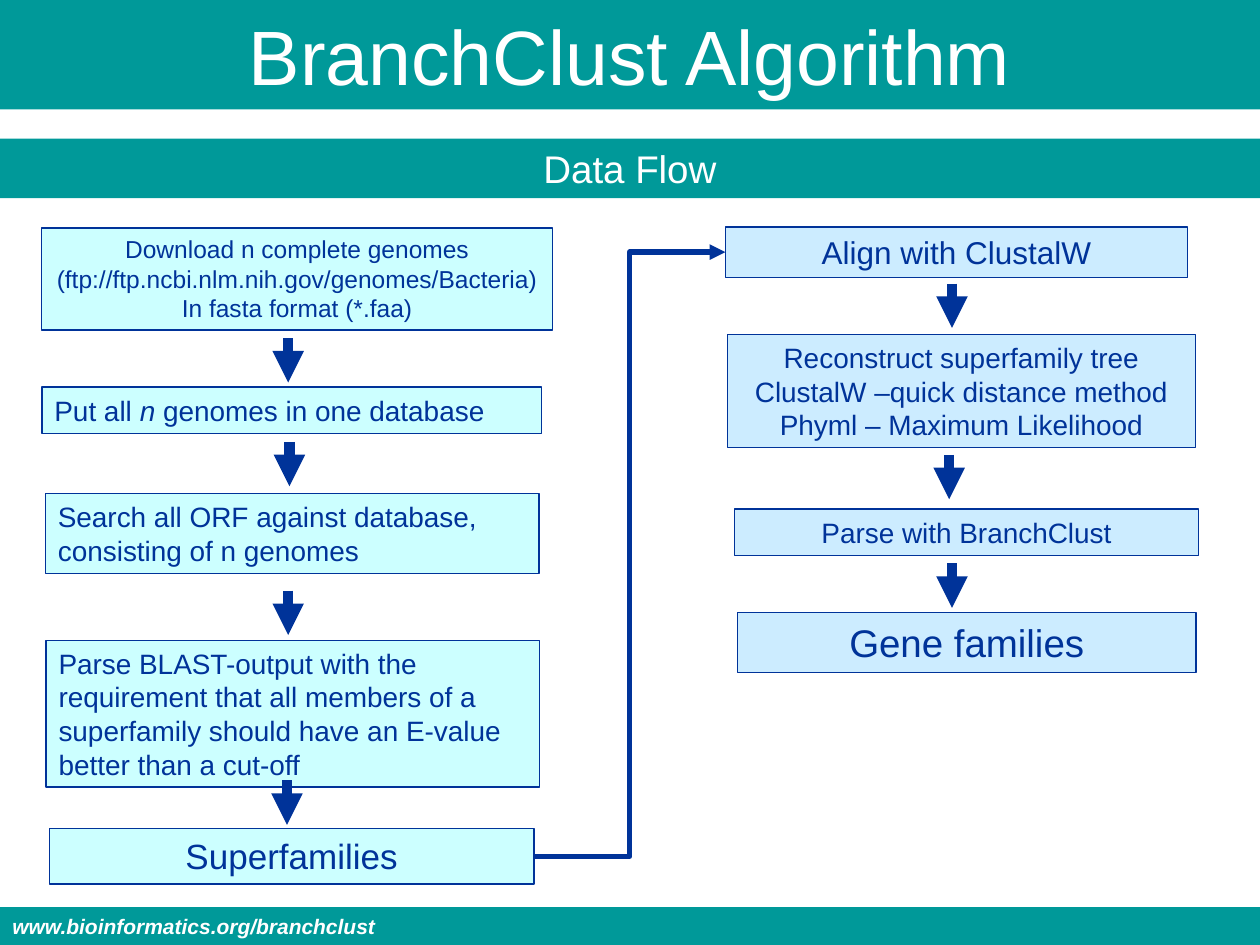
from lxml.etree import SubElement
from pptx import Presentation
from pptx.dml.color import RGBColor
from pptx.enum.shapes import MSO_CONNECTOR as Connector, MSO_SHAPE as Shape
from pptx.enum.text import MSO_ANCHOR as Anchor, MSO_AUTO_SIZE as AutoSize, PP_ALIGN as Align
from pptx.oxml.ns import qn
from pptx.util import Pt

COLORS = {
    "banner": "009999",
    "banner_text": "FFFFFF",
    "ink": "003399",
    "search": "CCFFFF",
    "tree": "CCECFF",
}
FRAME = {
    "word_wrap": True,
    "auto_size": AutoSize.NONE,
    "margin_left": Pt(7.2),
    "margin_right": Pt(7.2),
    "margin_top": Pt(3.6),
    "margin_bottom": Pt(3.6),
}
SEARCH_STEPS = [
    ((23.8, 130.3, 292, 58.3), 14, Align.CENTER,
     ["Download n complete genomes (ftp://ftp.ncbi.nlm.nih.gov/genomes/Bacteria)",
      "In fasta format (*.faa)"]),
    ((24, 221.2, 285.6, 26.6), 16, Align.LEFT, ["Put all *n* genomes in one database"]),
    ((26, 282.2, 282, 45.4), 16, Align.LEFT,
     ["Search all ORF against database, consisting of n genomes"]),
    ((26.4, 365.8, 282, 84), 16, Align.LEFT,
     ["Parse BLAST-output with the requirement that all members of a "
      "superfamily should have an E-value better than a cut-off"]),
    ((28.2, 473.5, 277, 31.7), 20, Align.CENTER, ["Superfamilies"]),
]
TREE_STEPS = [
    ((414.5, 129.7, 264.2, 28.8), 18, Align.CENTER, ["Align with ClustalW"]),
    ((415.6, 191, 267.6, 64.6), 16, Align.CENTER,
     ["Reconstruct superfamily tree", "ClustalW –quick distance method",
      "Phyml – Maximum Likelihood"]),
    ((419.8, 290.9, 265, 26.6), 16, Align.CENTER, ["Parse with BranchClust"]),
    ((421.4, 350.2, 262, 34), 22, Align.CENTER, ["Gene families"]),
]
SEARCH_ARROWS = [(164.7, 193.2), (165.4, 252.5), (164.7, 337.5), (164, 446)]
TREE_ARROWS = [(544, 162), (542.4, 259.9), (544, 322)]
ARROW_LENGTH = 25.4


def rgb(name):
    """Return the named colour."""
    return RGBColor.from_string(COLORS[name])


def set_all(target, values):
    """Set every attribute given in a dict of format values."""
    for attribute, value in values.items():
        setattr(target, attribute, value)


def paint(shape, fill):
    """Give a shape a plain fill."""
    shape.fill.solid()
    shape.fill.fore_color.rgb = rgb(fill)


def write(shape, lines, size, color, align, anchor=Anchor.TOP, bold=False, italic=False):
    """Write one paragraph per line, with the parts between asterisks in italics."""
    frame = shape.text_frame
    set_all(frame, {**FRAME, "vertical_anchor": anchor})
    for row, line in enumerate(lines):
        paragraph = frame.add_paragraph() if row else frame.paragraphs[0]
        paragraph.alignment = align
        pieces = [line] if line.count("*") < 2 else line.split("*")
        if "(*." in line:
            pieces = [line]
        for position, piece in enumerate(pieces):
            run = paragraph.add_run()
            run.text = piece
            set_all(run.font, {"name": "Arial", "size": Pt(size), "bold": bold,
                               "italic": italic or position % 2 == 1})
            run.font.color.rgb = rgb(color)


def add_title(slide, text, height):
    """Turn the title placeholder into the top banner."""
    title = slide.shapes.title
    set_all(title, {"left": Pt(0), "top": Pt(0), "width": Pt(720), "height": Pt(height)})
    paint(title, "banner")
    write(title, [text], 44, "banner_text", Align.CENTER, Anchor.MIDDLE)


def add_box(slide, bounds, fill):
    """Add a plain rectangle without outline."""
    box = slide.shapes.add_shape(Shape.RECTANGLE, *map(Pt, bounds))
    box.shadow.inherit = False
    paint(box, fill)
    box.line.fill.background()
    return box


def add_banner(slide, top, height, text, size, align, **style):
    """Add a full-width band with text."""
    banner = add_box(slide, (0, top, 720, height), "banner")
    write(banner, [text], size, "banner_text", align, **style)


def add_step(slide, fill, bounds, size, align, lines):
    """Add one outlined step of the data flow."""
    step = add_box(slide, bounds, fill)
    step.line.color.rgb = rgb("ink")
    step.line.width = Pt(0.75)
    write(step, lines, size, "ink", align)
    return step


def add_arrow(slide, kind, start, end, width):
    """Add a connector with a triangular head at its end."""
    arrow = slide.shapes.add_connector(kind, *map(Pt, (*start, *end)))
    arrow.line.color.rgb = rgb("ink")
    arrow.line.width = Pt(width)
    SubElement(arrow.line._get_or_add_ln(), qn("a:tailEnd"), type="triangle")
    SubElement(arrow._element.spPr, qn("a:effectLst"))
    return arrow


def add_column(slide, fill, steps, arrows):
    """Add a column of steps with the arrows between them."""
    boxes = [add_step(slide, fill, *step) for step in steps]
    for x, top in arrows:
        add_arrow(slide, Connector.STRAIGHT, (x, top), (x, top + ARROW_LENGTH), 6)
    return boxes


def main():
    """Build the data flow slide."""
    deck = Presentation()
    set_all(deck, {"slide_width": Pt(720), "slide_height": Pt(540)})
    slide = deck.slides.add_slide(deck.slide_layouts[5])

    add_title(slide, "BranchClust Algorithm", 62.6)
    add_banner(slide, 79.2, 34, "Data Flow", 22, Align.CENTER)
    add_banner(slide, 518.4, 21.6, "www.bioinformatics.org/branchclust", 12, Align.LEFT,
               bold=True, italic=True)

    superfamilies = add_column(slide, "search", SEARCH_STEPS, SEARCH_ARROWS)[-1]
    alignment = add_column(slide, "tree", TREE_STEPS, TREE_ARROWS)[0]
    link = add_arrow(slide, Connector.ELBOW, (305.2, 489.4), (414.5, 144.1), 3)
    link.begin_connect(superfamilies, 3)
    link.end_connect(alignment, 1)

    deck.save("out.pptx")


if __name__ == "__main__":
    main()
